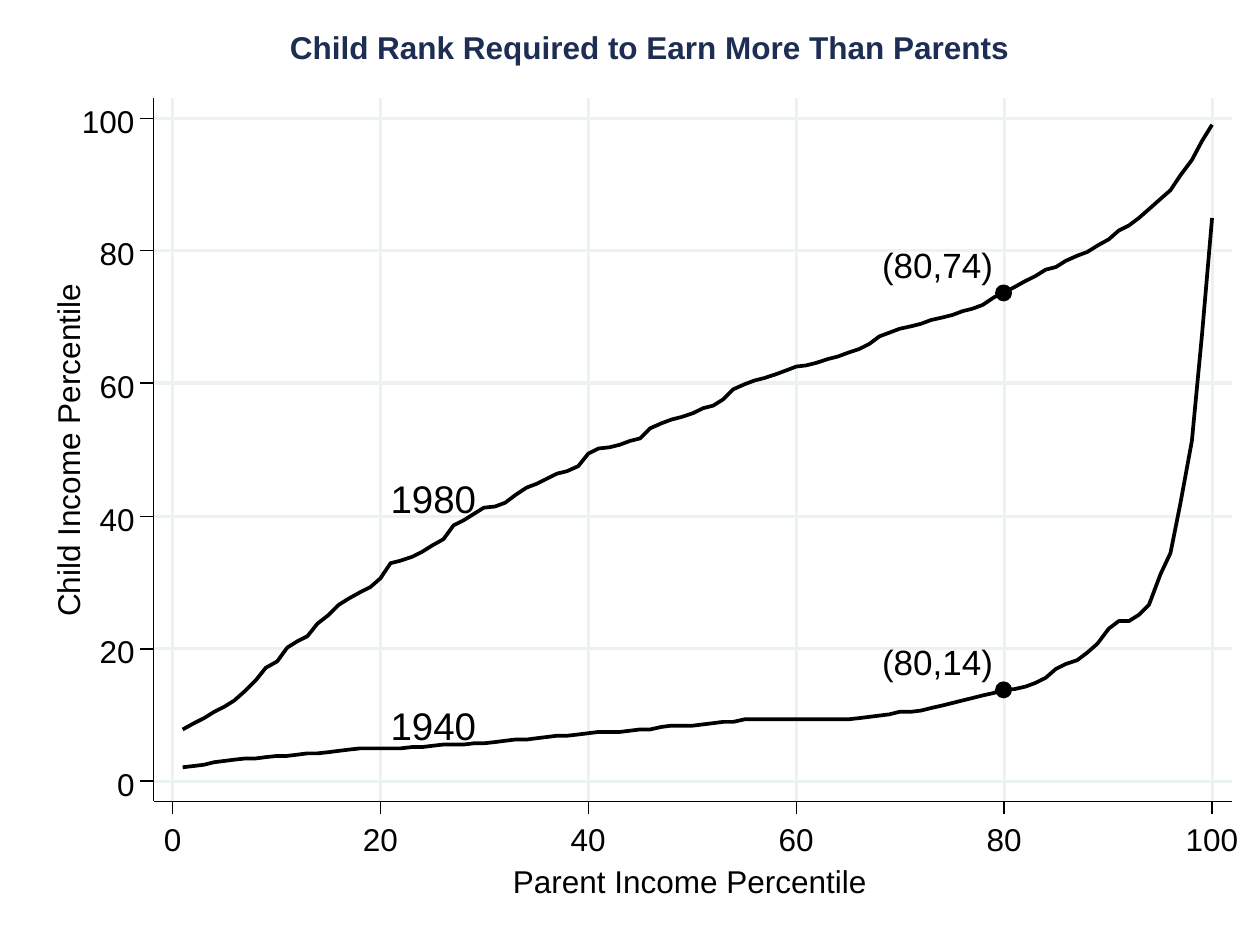
from lxml.etree import SubElement
from pptx import Presentation
from pptx.dml.color import RGBColor
from pptx.enum.shapes import MSO_CONNECTOR, MSO_SHAPE
from pptx.enum.text import MSO_AUTO_SIZE, PP_ALIGN
from pptx.oxml.ns import qn
from pptx.util import Pt

PX = 9144  # EMU per px, 100 px to the inch
BLACK = RGBColor(0x00, 0x00, 0x00)
WHITE = RGBColor(0xFF, 0xFF, 0xFF)
GRID = RGBColor(0xEA, 0xF2, 0xF3)
NAVY = RGBColor(0x1E, 0x2D, 0x53)

# Plot frame and axis scales
LEFT, TOP, RIGHT, BOTTOM = 122, 78, 978, 636
TICKS = range(0, 101, 20)
x_at = {rank: round(137 + 8.25 * rank) for rank in range(101)}
y_at = {rank: round(620 - 5.26 * rank) for rank in TICKS}

# Height in px of each curve at parent percentiles 1 to 100
CURVE_1940 = [
    609, 608, 607, 605, 604, 603, 602, 602, 601, 600,
    600, 599, 598, 598, 597, 596, 595, 594, 594, 594,
    594, 594, 593, 593, 592, 591, 591, 591, 590, 590,
    589, 588, 587, 587, 586, 585, 584, 584, 583, 582,
    581, 581, 581, 580, 579, 579, 577, 576, 576, 576,
    575, 574, 573, 573, 571, 571, 571, 571, 571, 571,
    571, 571, 571, 571, 571, 570, 569, 568, 567, 565,
    565, 564, 562, 560, 558, 556, 554, 552, 550, 547,
    547, 545, 542, 538, 531, 527, 524, 518, 511, 499,
    493, 493, 488, 480, 456, 439, 399, 350, 266, 173,
]
CURVE_1980 = [
    579, 574, 570, 565, 561, 556, 548, 540, 530, 525,
    514, 509, 505, 495, 488, 480, 475, 470, 466, 459,
    447, 445, 442, 438, 433, 428, 417, 413, 408, 403,
    402, 399, 393, 387, 384, 380, 376, 374, 370, 360,
    356, 355, 353, 350, 348, 340, 336, 333, 331, 328,
    324, 322, 317, 309, 305, 302, 300, 297, 294, 291,
    290, 288, 285, 283, 280, 277, 273, 267, 264, 261,
    259, 257, 254, 252, 250, 247, 245, 242, 236, 232,
    228, 223, 219, 214, 212, 207, 203, 200, 195, 190,
    183, 179, 173, 166, 158, 151, 139, 127, 112, 99,
]


def add_line(shapes, x1, y1, x2, y2, color, width):
    line = shapes.add_connector(
        MSO_CONNECTOR.STRAIGHT, x1 * PX, y1 * PX, x2 * PX, y2 * PX)
    line.line.color.rgb = color
    line.line.width = Pt(width)
    SubElement(line._element.spPr, qn("a:effectLst"))


def add_text(shapes, text, left, top, width, height, size, color=BLACK):
    box = shapes.add_textbox(left * PX, top * PX, width * PX, height * PX)
    frame = box.text_frame
    frame.word_wrap = False
    frame.auto_size = MSO_AUTO_SIZE.SHAPE_TO_FIT_TEXT
    frame.margin_left = frame.margin_right = 0
    frame.margin_top = frame.margin_bottom = 0
    run = frame.paragraphs[0].add_run()
    run.text = text
    run.font.name = "Arial"
    run.font.size = Pt(size)
    run.font.color.rgb = color
    return box


presentation = Presentation()
presentation.slide_width = 1000 * PX
presentation.slide_height = 750 * PX
slide = presentation.slides.add_slide(presentation.slide_layouts[6])
graph = slide.shapes.add_group_shape().shapes

# Graph and plot backgrounds
for left, top, width, height in [
    (0, 12, 999, 727),
    (LEFT, TOP, RIGHT - LEFT, BOTTOM - TOP),
]:
    panel = graph.add_shape(
        MSO_SHAPE.RECTANGLE, left * PX, top * PX, width * PX, height * PX)
    panel.shadow.inherit = False
    panel.fill.solid()
    panel.fill.fore_color.rgb = WHITE
    panel.line.color.rgb = WHITE
    panel.line.width = Pt(0.88)

# Gridlines
for tick in TICKS:
    add_line(graph, LEFT, y_at[tick], RIGHT, y_at[tick], GRID, 1.75)
for tick in TICKS:
    add_line(graph, x_at[tick], BOTTOM, x_at[tick], TOP, GRID, 1.75)

# Curves
for heights in (CURVE_1940, CURVE_1980):
    points = [(x_at[rank], y) for rank, y in enumerate(heights, start=1)]
    builder = graph.build_freeform(*points[0], scale=PX)
    builder.add_line_segments(points[1:], close=False)
    curve = builder.convert_to_shape()
    curve.shadow.inherit = False
    curve.fill.background()
    curve.line.color.rgb = BLACK
    curve.line.width = Pt(2.13)

# Marked points at the 80th percentile
for label, heights in [("(80,14)", CURVE_1940), ("(80,74)", CURVE_1980)]:
    y = heights[80 - 1]
    marker = graph.add_shape(
        MSO_SHAPE.OVAL, (x_at[80] - 6) * PX, (y - 5) * PX, 11 * PX, 11 * PX)
    marker.shadow.inherit = False
    marker.fill.solid()
    marker.fill.fore_color.rgb = BLACK
    marker.line.color.rgb = BLACK
    marker.line.width = Pt(1.75)
    add_text(graph, label, 700, y - 39, 105, 39, 20)

# Curve names
for year, top in [("1980", 377), ("1940", 557)]:
    add_text(graph, year, 310, top, 69, 37, 22)

# Vertical axis
add_line(graph, LEFT, BOTTOM, LEFT, TOP, BLACK, 0.88)
for tick in TICKS:
    digits = len(str(tick))
    add_line(graph, LEFT, y_at[tick], LEFT - 11, y_at[tick], BLACK, 0.88)
    add_text(graph, str(tick), 107 - 14 * digits, y_at[tick] - 13,
             12 + 14 * digits, 36, 18)

# Horizontal axis
add_line(graph, LEFT, BOTTOM, RIGHT, BOTTOM, BLACK, 0.88)
for tick in TICKS:
    digits = len(str(tick))
    add_line(graph, x_at[tick], BOTTOM, x_at[tick], BOTTOM + 10, BLACK, 0.88)
    add_text(graph, str(tick), x_at[tick] - 7 * digits, BOTTOM + 15,
             12 + 14 * digits, 36, 18)

# Axis titles
add_text(graph, "Parent Income Percentile", 407, 684, 309, 36, 18)
axis_title = add_text(
    slide.shapes, "Child Income Percentile", -89, 326, 291, 36, 18)
axis_title.rotation = 270

# Graph title
title = add_text(
    slide.shapes, "Child Rank Required to Earn More Than Parents",
    40, 17, 951, 40, 18, NAVY)
title.text_frame.word_wrap = True
title.text_frame.margin_top = title.text_frame.margin_bottom = 5 * PX
title.text_frame.margin_left = title.text_frame.margin_right = 10 * PX
paragraph = title.text_frame.paragraphs[0]
paragraph.alignment = PP_ALIGN.CENTER
paragraph.runs[0].font.bold = True

presentation.save("out.pptx")
